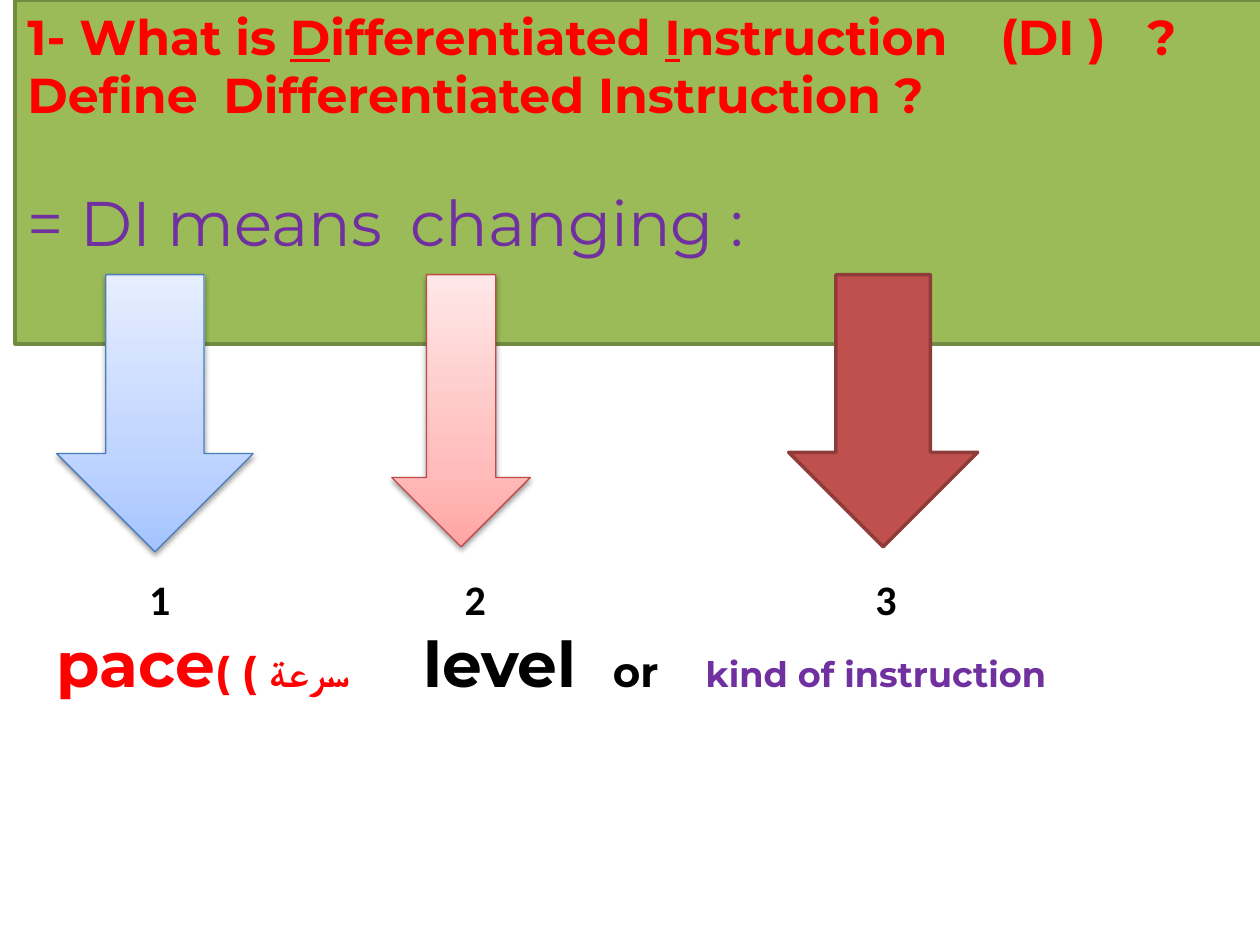
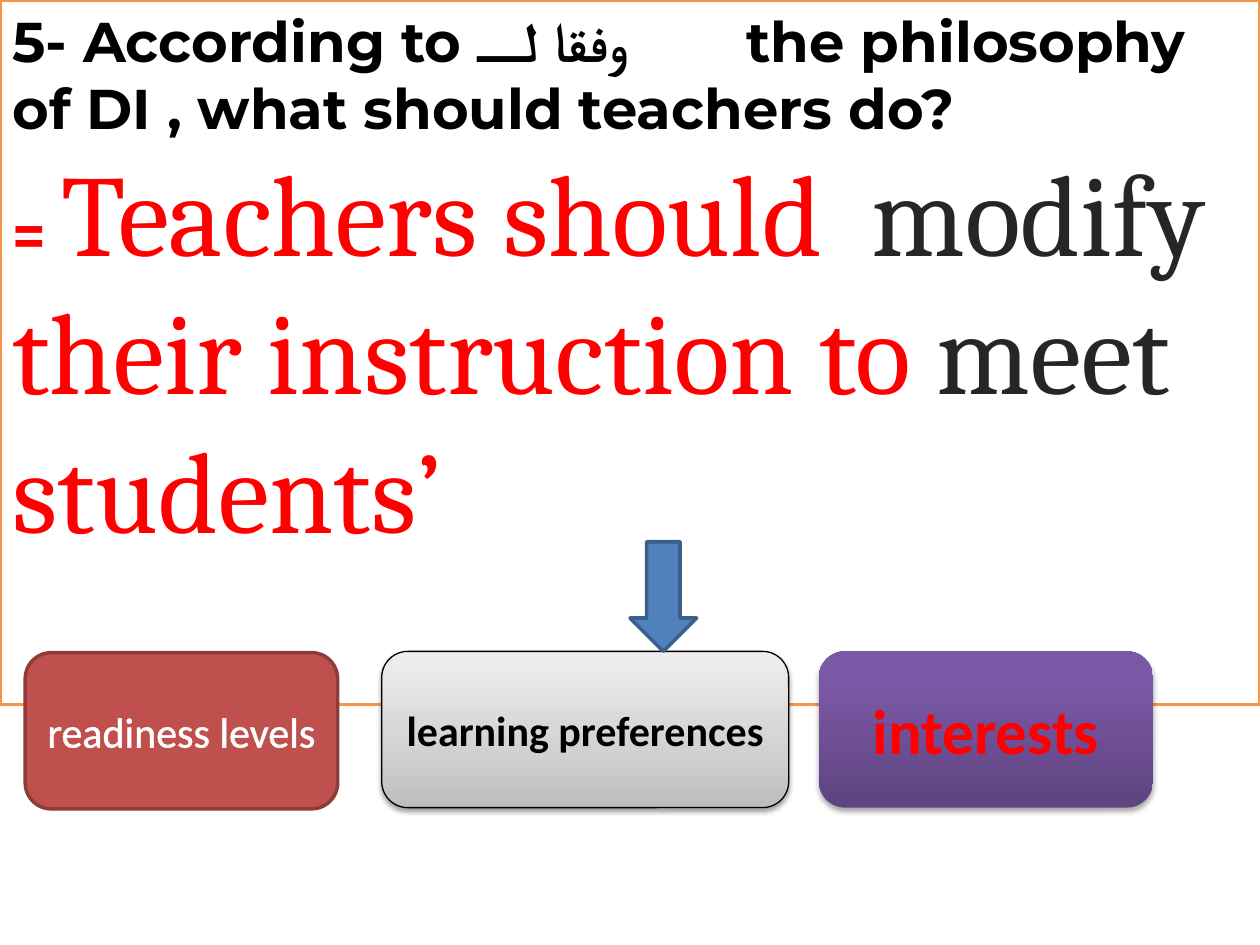
from dataclasses import dataclass
from typing import NamedTuple, Optional, Union

from lxml.etree import SubElement
from pptx import Presentation
from pptx.dml.color import RGBColor
from pptx.enum.shapes import MSO_SHAPE as Preset
from pptx.enum.text import MSO_ANCHOR as Anchor, PP_ALIGN as Align
from pptx.oxml.ns import qn
from pptx.util import Pt

# Shared colours and fonts
BLACK = RGBColor(0x00, 0x00, 0x00)
WHITE = RGBColor(0xFF, 0xFF, 0xFF)
INK = RGBColor(0x26, 0x26, 0x26)
BRIGHT_RED = RGBColor(0xFF, 0x00, 0x00)
PURPLE = RGBColor(0x70, 0x30, 0xA0)
GREEN = RGBColor(0x9B, 0xBB, 0x59)
GREEN_EDGE = RGBColor(0x73, 0x8A, 0x42)
ORANGE = RGBColor(0xF7, 0x96, 0x46)
BRICK = RGBColor(0xC0, 0x50, 0x4D)
BRICK_EDGE = RGBColor(0x8E, 0x3B, 0x39)
BLUE = RGBColor(0x4F, 0x81, 0xBD)
BLUE_EDGE = RGBColor(0x3A, 0x5F, 0x8C)
SKY_EDGE = RGBColor(0x4B, 0x7E, 0xBC)
ROSE_EDGE = RGBColor(0xBF, 0x4C, 0x48)

HEADING_FONT = "Montserrat"
LABEL_FONT = "Calibri"
ANSWER_FONT = "Cambria"


class Stop(NamedTuple):
    percent: int
    color: str


class Shadow(NamedTuple):
    opacity: int
    distance: float


class Edge(NamedTuple):
    color: RGBColor
    width: float


Gradient = tuple[Stop, ...]
SKY = (Stop(0, "A4C4FF"), Stop(35, "BFD4FF"), Stop(100, "E6EEFF"))
ROSE = (Stop(0, "FFA6A5"), Stop(35, "FFC0BF"), Stop(100, "FFE7E7"))
SILVER = (Stop(0, "BDBDBD"), Stop(35, "D1D1D1"), Stop(100, "EEEEEE"))
VIOLET = (Stop(0, "5F4480"), Stop(80, "7B58A6"), Stop(100, "7C57A8"))
SOFT = Shadow(38, 1.6)
DEEP = Shadow(35, 1.8)


@dataclass(frozen=True)
class Block:
    """A preset shape with its place and finish."""
    preset: Preset
    left: float
    top: float
    width: float
    height: float
    fill: Union[RGBColor, Gradient]
    edge: Optional[Edge] = None
    shadow: Optional[Shadow] = None


@dataclass(frozen=True)
class Style:
    """Font settings; None leaves a setting as it is."""
    size: Optional[float] = None
    color: Optional[RGBColor] = None
    bold: Optional[bool] = None
    name: Optional[str] = None
    underline: Optional[bool] = None


class Piece(NamedTuple):
    text: str
    style: Style = Style()


@dataclass(frozen=True)
class Line:
    """One paragraph: its common style, its pieces and its tab stops."""
    style: Style
    pieces: tuple[Piece, ...]
    tabs: tuple[float, ...] = ()
    tab_align: str = "l"
    space_before: float = 0
    align: Align = Align.LEFT


@dataclass(frozen=True)
class Card:
    block: Block
    label: str
    style: Style
    outline: float = 0


def apply_style(font, style: Style) -> None:
    for field in ("name", "bold", "underline"):
        value = getattr(style, field)
        if value is not None:
            setattr(font, field, value)
    if style.size is not None:
        font.size = Pt(style.size)
    if style.color is not None:
        font.color.rgb = style.color


def paint_gradient(shape, stops: Gradient) -> None:
    shape.fill.gradient()
    shape.fill.gradient_angle = 90
    stop_list = shape._element.spPr.find(qn("a:gradFill")).find(qn("a:gsLst"))
    for old_stop in list(stop_list):
        stop_list.remove(old_stop)
    for stop in stops:
        entry = SubElement(stop_list, qn("a:gs"), pos=str(stop.percent * 1000))
        SubElement(entry, qn("a:srgbClr"), val=stop.color)


def cast_shadow(shape, shadow: Shadow) -> None:
    effects = shape._element.spPr.find(qn("a:effectLst"))
    outer = SubElement(effects, qn("a:outerShdw"), blurRad=str(Pt(3.1)),
                       dist=str(Pt(shadow.distance)), dir="5400000", rotWithShape="0")
    tint = SubElement(outer, qn("a:srgbClr"), val=str(BLACK))
    SubElement(tint, qn("a:alpha"), val=str(shadow.opacity * 1000))


def draw_block(slide, block: Block):
    shape = slide.shapes.add_shape(block.preset, Pt(block.left), Pt(block.top),
                                   Pt(block.width), Pt(block.height))
    shape.shadow.inherit = False
    if isinstance(block.fill, RGBColor):
        shape.fill.solid()
        shape.fill.fore_color.rgb = block.fill
    else:
        paint_gradient(shape, block.fill)
    if block.edge:
        shape.line.color.rgb = block.edge.color
        shape.line.width = Pt(block.edge.width)
    else:
        shape.line.fill.background()
    if block.shadow:
        cast_shadow(shape, block.shadow)
    return shape


def write_lines(frame, lines: tuple[Line, ...], anchor: Anchor = Anchor.TOP) -> None:
    frame.word_wrap = True
    frame.vertical_anchor = anchor
    for index, line in enumerate(lines):
        paragraph = frame.add_paragraph() if index else frame.paragraphs[0]
        if line.tabs:
            tab_list = SubElement(paragraph._p.get_or_add_pPr(), qn("a:tabLst"))
            for position in line.tabs:
                SubElement(tab_list, qn("a:tab"), pos=str(Pt(position)), algn=line.tab_align)
        paragraph.alignment = line.align
        if line.space_before:
            paragraph.space_before = Pt(line.space_before)
        apply_style(paragraph.font, line.style)
        for piece in line.pieces:
            run = paragraph.add_run()
            run.text = piece.text
            apply_style(run.font, piece.style)


def outline_text(run, width: float, color: RGBColor) -> None:
    properties = run._r.get_or_add_rPr()
    stroke = SubElement(properties, qn("a:ln"), w=str(Pt(width)))
    SubElement(SubElement(stroke, qn("a:solidFill")), qn("a:srgbClr"), val=str(color))
    properties.insert(0, stroke)


def draw_card(slide, card: Card) -> None:
    frame = draw_block(slide, card.block).text_frame
    write_lines(frame, (Line(card.style, (Piece(card.label),), align=Align.CENTER),),
                Anchor.MIDDLE)
    if card.outline:
        outline_text(frame.paragraphs[0].runs[0], card.outline, card.style.color)


# Slide 1: what DI changes
QUESTION = Style(28, BRIGHT_RED, True, HEADING_FONT)
INITIAL = Style(underline=True)
DEFINITION_PANEL = Block(Preset.RECTANGLE, 8.64, 0, 712.8, 196.56, GREEN, Edge(GREEN_EDGE, 2))
DEFINITION = (
    Line(QUESTION, (Piece("1- What is "), Piece("D", INITIAL), Piece("ifferentiated "),
                    Piece("I", INITIAL), Piece("nstruction\t(DI )\t?")), tabs=(556, 640)),
    Line(QUESTION, (Piece("Define\tDifferentiated Instruction ?"),), tabs=(112,)),
    Line(Style(36, PURPLE, False, HEADING_FONT), (Piece("= DI means\tchanging :"),),
         tabs=(219,), space_before=34),
)
ARROW_TOP = 156.96
CHANGE_ARROWS = (
    Block(Preset.DOWN_ARROW, 32.4, ARROW_TOP, 112.32, 158.4, SKY, Edge(SKY_EDGE, 0.75), SOFT),
    Block(Preset.DOWN_ARROW, 223.92, ARROW_TOP, 79.2, 155.52, ROSE, Edge(ROSE_EDGE, 0.75), SOFT),
    Block(Preset.DOWN_ARROW, 450.72, ARROW_TOP, 108, 155.52, BRICK, Edge(BRICK_EDGE, 2)),
)
CHANGES = (
    Line(Style(24, BLACK, True, LABEL_FONT), (Piece("\t1\t2\t3"),),
         tabs=(59, 239.3, 474), tab_align="ctr"),
    Line(Style(bold=True, name=HEADING_FONT), (
        Piece("pace", Style(36, BRIGHT_RED)), Piece("( ( سرعة\t", Style(24, BRIGHT_RED)),
        Piece("level", Style(36, BLACK)), Piece("\tor\t", Style(24, BLACK)),
        Piece("kind of instruction", Style(20, PURPLE))), tabs=(209.5, 318, 371)),
)

# Slide 2: what teachers should do
ANSWER_PANEL = Block(Preset.RECTANGLE, 0, 0, 720, 402.48, WHITE, Edge(ORANGE, 2))
RED_ANSWER = Style(66, BRIGHT_RED, False, ANSWER_FONT)
DARK_ANSWER = Style(66, INK, False, ANSWER_FONT)
ANSWER = (
    Line(Style(32, BLACK, True, HEADING_FONT),
         (Piece("5- According to وفقا لــ\tthe philosophy of DI , what should teachers do?"),),
         tabs=(419.5,)),
    Line(Style(), (
        Piece("= ", Style(32, BRIGHT_RED, True, HEADING_FONT)),
        Piece("Teachers should\t", RED_ANSWER), Piece("modify", DARK_ANSWER),
        Piece(" their instruction to ", RED_ANSWER), Piece("meet", DARK_ANSWER),
        Piece(" students’", RED_ANSWER)), tabs=(491,)),
)
CARD_TOP, CARD_HEIGHT = 372.24, 89.28
NEED_CARDS = (
    Card(Block(Preset.ROUNDED_RECTANGLE, 14.4, CARD_TOP + 0.72, 178.56, CARD_HEIGHT,
               BRICK, Edge(BRICK_EDGE, 2)),
         "readiness levels", Style(24, WHITE, name=LABEL_FONT), outline=1.45),
    Card(Block(Preset.ROUNDED_RECTANGLE, 218.16, CARD_TOP, 232.56, CARD_HEIGHT,
               SILVER, Edge(BLACK, 0.75), SOFT),
         "learning preferences", Style(24, BLACK, True, LABEL_FONT)),
    Card(Block(Preset.ROUNDED_RECTANGLE, 468, CARD_TOP, 190.8, CARD_HEIGHT,
               VIOLET, shadow=DEEP),
         "interests", Style(36, BRIGHT_RED, True, LABEL_FONT)),
)
NEEDS_ARROW = Block(Preset.DOWN_ARROW, 360, 309.6, 38.16, 62.64, BLUE, Edge(BLUE_EDGE, 2))


def build_definition(slide) -> None:
    write_lines(draw_block(slide, DEFINITION_PANEL).text_frame, DEFINITION)
    for arrow in CHANGE_ARROWS:
        draw_block(slide, arrow)
    changes = slide.shapes.add_textbox(Pt(25.2), Pt(258.48), Pt(629.28), Pt(218.16)).text_frame
    changes.margin_top = Pt(69.5)
    write_lines(changes, CHANGES)


def build_answer(slide) -> None:
    write_lines(draw_block(slide, ANSWER_PANEL).text_frame, ANSWER)
    for card in NEED_CARDS:
        draw_card(slide, card)
    draw_block(slide, NEEDS_ARROW)


def main() -> None:
    deck = Presentation()
    deck.slide_width, deck.slide_height = Pt(720), Pt(540)
    blank = deck.slide_layouts[6]
    for build in (build_definition, build_answer):
        build(deck.slides.add_slide(blank))
    deck.save("out.pptx")


if __name__ == "__main__":
    main()
